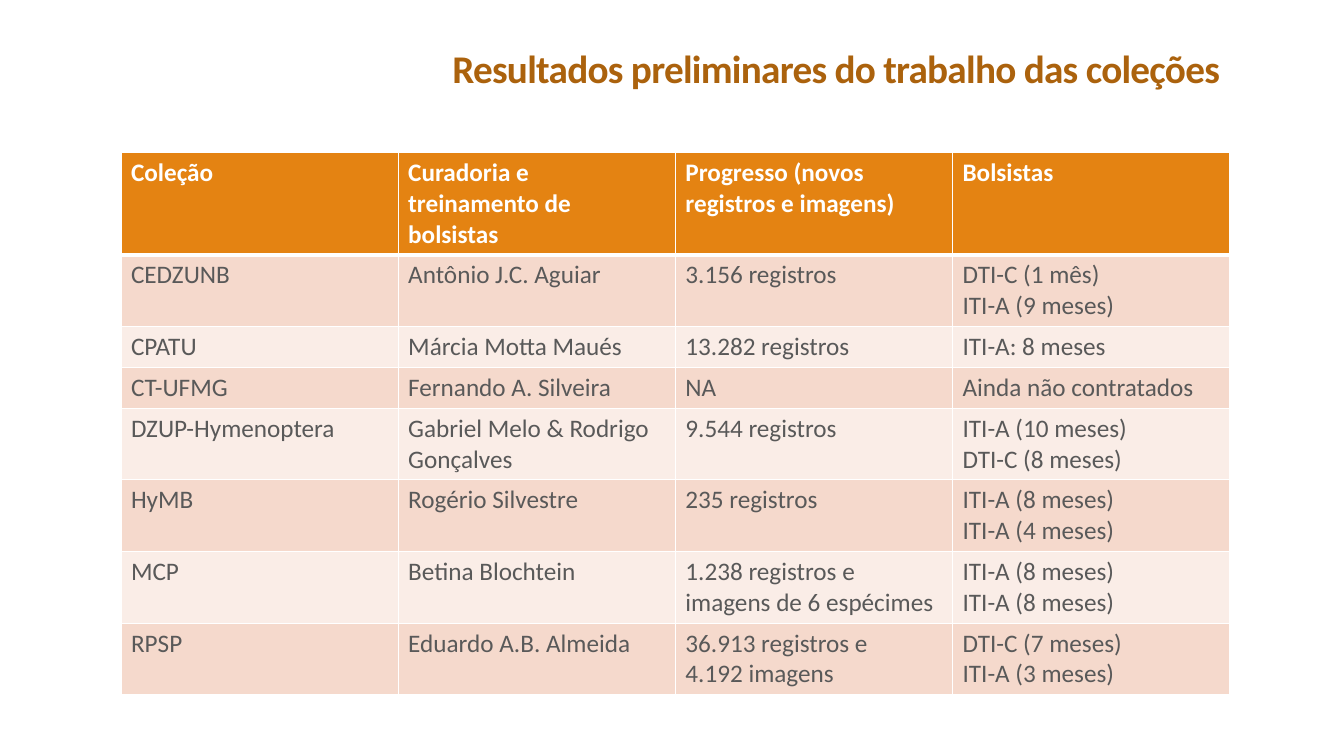
from lxml.etree import SubElement
from pptx import Presentation
from pptx.dml.color import RGBColor
from pptx.enum.text import MSO_ANCHOR, MSO_AUTO_SIZE, PP_ALIGN
from pptx.oxml.ns import qn
from pptx.util import Pt

# Content
HEADING = "Resultados preliminares do trabalho das coleções"
HEADER = ("Coleção", "Curadoria e treinamento de bolsistas",
          "Progresso (novos registros e imagens)", "Bolsistas")
COLLECTIONS = [
    ("CEDZUNB", "Antônio J.C. Aguiar", "3.156 registros",
     "DTI-C (1 mês)\nITI-A (9 meses)"),
    ("CPATU", "Márcia Motta Maués", "13.282 registros", "ITI-A: 8 meses"),
    ("CT-UFMG", "Fernando A. Silveira", "NA", "Ainda não contratados"),
    ("DZUP-Hymenoptera", "Gabriel Melo & Rodrigo Gonçalves", "9.544 registros",
     "ITI-A (10 meses)\nDTI-C (8 meses)"),
    ("HyMB", "Rogério Silvestre", "235 registros",
     "ITI-A (8 meses)\nITI-A (4 meses)"),
    ("MCP", "Betina Blochtein", "1.238 registros e imagens de 6 espécimes",
     "ITI-A (8 meses)\nITI-A (8 meses)"),
    ("RPSP", "Eduardo A.B. Almeida", "36.913 registros e\n4.192 imagens",
     "DTI-C (7 meses)\nITI-A (3 meses)"),
]
HEADER_LINES = 3

# Style
FONT = "Calibri"
BROWN = RGBColor(0xAB, 0x62, 0x0D)
ORANGE = RGBColor(0xE4, 0x83, 0x12)
BANDS = (RGBColor(0xF5, 0xD9, 0xCC), RGBColor(0xFA, 0xED, 0xE7))
GREY = RGBColor(0x59, 0x59, 0x59)
WHITE = RGBColor(0xFF, 0xFF, 0xFF)

# Layout, in points
LEFT, WIDTH = 86.4, 792
TABLE_TOP = 108.9
CELL_MARGINS, LINE_HEIGHT = 7.2, 21.97


def add_text(paragraph, text, size, color, bold):
    for index, line in enumerate(text.split("\n")):
        if index:
            paragraph.add_line_break()
        run = paragraph.add_run()
        run.text = line
        run.font.name = FONT
        run.font.size = Pt(size)
        run.font.bold = bold
        run.font.color.rgb = color


def add_borders(cell, bottom_width, top_width):
    properties = cell._tc.get_or_add_tcPr()
    for side, width in (("L", 1), ("R", 1), ("T", top_width), ("B", bottom_width)):
        border = SubElement(properties, qn(f"a:ln{side}"), w=str(Pt(width)))
        fill = SubElement(border, qn("a:solidFill"))
        SubElement(fill, qn("a:srgbClr"), val=str(WHITE))


def row_height(lines):
    return Pt(round(CELL_MARGINS + LINE_HEIGHT * lines, 2))


presentation = Presentation()
presentation.slide_width, presentation.slide_height = Pt(960), Pt(540)
slide = presentation.slides.add_slide(presentation.slide_layouts[5])

# Heading
heading = slide.shapes.title
heading.left, heading.top = Pt(LEFT), Pt(22.3)
heading.width, heading.height = Pt(WIDTH), Pt(46.8)
heading_frame = heading.text_frame
heading_frame.word_wrap = True
heading_frame.auto_size = MSO_AUTO_SIZE.NONE
heading_frame.vertical_anchor = MSO_ANCHOR.BOTTOM
heading_line = heading_frame.paragraphs[0]
heading_line.alignment = PP_ALIGN.RIGHT
heading_line.line_spacing = 0.85
add_text(heading_line, HEADING, 28, BROWN, True)
heading_line.runs[0].font._element.set("spc", "-50")

# Table of collections
rows = [HEADER, *COLLECTIONS]
# The last two columns break by hand or wrap; the widest cell sets the row height
line_counts = [HEADER_LINES] + [
    2 if "\n" in scholars else 1 for *_, scholars in COLLECTIONS]
collections = slide.shapes.add_table(
    len(rows), len(HEADER), Pt(LEFT), Pt(TABLE_TOP), Pt(WIDTH),
    sum(row_height(lines) for lines in line_counts)).table
for column in collections.columns:
    column.width = Pt(WIDTH / len(HEADER))

for row_index, (texts, lines) in enumerate(zip(rows, line_counts)):
    is_header = row_index == 0
    collections.rows[row_index].height = row_height(lines)
    for column_index, text in enumerate(texts):
        cell = collections.cell(row_index, column_index)
        add_borders(cell, 3 if is_header else 1, 3 if row_index == 1 else 1)
        cell.fill.solid()
        cell.fill.fore_color.rgb = ORANGE if is_header else BANDS[(row_index - 1) % 2]
        add_text(cell.text_frame.paragraphs[0], text, 18,
                 WHITE if is_header else GREY, is_header)

presentation.save("out.pptx")
